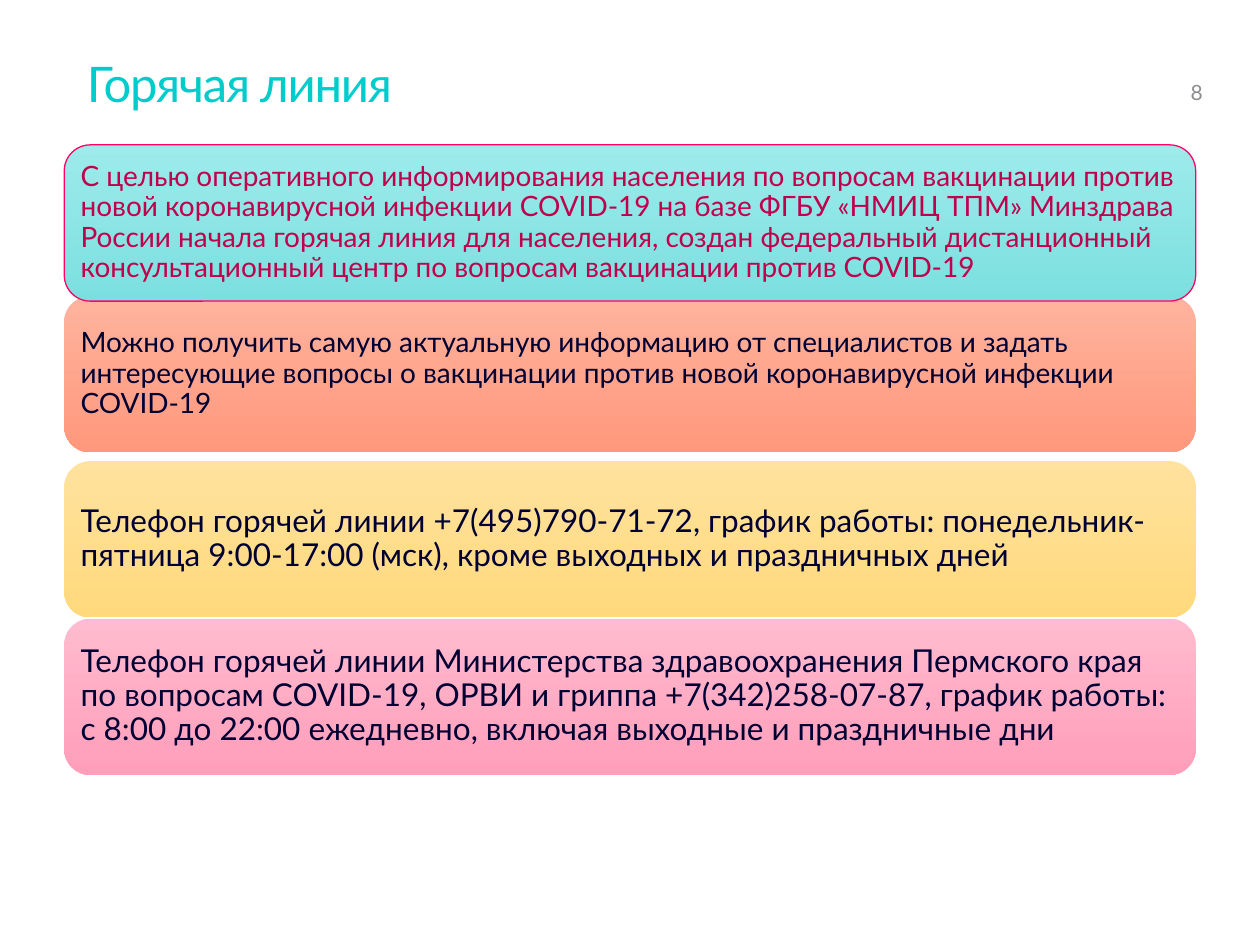
import pptx
import pptx.util
import pptx.dml.color
import pptx.enum.shapes
import pptx.enum.text

Inches = pptx.util.Inches
Pt = pptx.util.Pt
RGBColor = pptx.dml.color.RGBColor
Anchor = pptx.enum.text.MSO_ANCHOR
Align = pptx.enum.text.PP_ALIGN

FONT = "Lato"
TEAL = RGBColor(0x00, 0xCC, 0xCC)
GREY = RGBColor(0x8C, 0x8C, 0x90)
NAVY = RGBColor(0x00, 0x00, 0x33)
CRIMSON = RGBColor(0xBF, 0x00, 0x4C)
HOT_PINK = RGBColor(0xFF, 0x00, 0x66)
AQUA = (RGBColor(0x9D, 0xEB, 0xEB), RGBColor(0x7C, 0xDF, 0xDF))
CORAL = (RGBColor(0xFF, 0xB3, 0x9E), RGBColor(0xFF, 0x98, 0x7C))
AMBER = (RGBColor(0xFF, 0xE2, 0x9E), RGBColor(0xFF, 0xD9, 0x7C))
PINK = (RGBColor(0xFF, 0xBB, 0xCF), RGBColor(0xFF, 0x9E, 0xBB))

HEADING = "Горячая линия"
PAGE = "8"
CARD_LEFT, CARD_WIDTH, CARD_HEIGHT = 0.51, 8.98, 1.24
CARDS = [
    (2.35, CORAL, None, NAVY, 16,
     "Можно получить самую актуальную информацию от специалистов и задать "
     "интересующие вопросы о вакцинации против новой коронавирусной инфекции COVID-19"),
    (3.66, AMBER, None, NAVY, 18,
     "Телефон горячей линии +7(495)790-71-72, график работы: понедельник-пятница "
     "9:00-17:00 (мск), кроме выходных и праздничных дней"),
    (4.91, PINK, None, NAVY, 18,
     "Телефон горячей линии Министерства здравоохранения Пермского края по вопросам "
     "COVID-19, ОРВИ и гриппа +7(342)258-07-87, график работы: с 8:00 до 22:00 "
     "ежедневно, включая выходные и праздничные дни"),
    (1.15, AQUA, HOT_PINK, CRIMSON, 16,
     "С целью оперативного информирования населения по вопросам вакцинации против "
     "новой коронавирусной инфекции COVID-19 на базе ФГБУ «НМИЦ ТПМ» Минздрава России "
     "начала горячая линия для населения, создан федеральный дистанционный "
     "консультационный центр по вопросам вакцинации против COVID-19"),
]


def write(frame, text, size, color, anchor, inset_x, inset_y, spacing=None, wrap=True):
    frame.word_wrap = wrap
    frame.auto_size = pptx.enum.text.MSO_AUTO_SIZE.NONE
    frame.vertical_anchor = anchor
    frame.margin_left = frame.margin_right = Inches(inset_x)
    frame.margin_top = frame.margin_bottom = Inches(inset_y)
    paragraph = frame.paragraphs[0]
    paragraph.alignment = Align.LEFT
    paragraph.line_spacing = spacing
    run = paragraph.add_run()
    run.text = text
    run.font.name = FONT
    run.font.size = Pt(size)
    run.font.color.rgb = color
    return run


def add_card(slide, top, gradient, outline, color, size, text):
    card = slide.shapes.add_shape(
        pptx.enum.shapes.MSO_SHAPE.ROUNDED_RECTANGLE,
        Inches(CARD_LEFT), Inches(top), Inches(CARD_WIDTH), Inches(CARD_HEIGHT))
    card.shadow.inherit = False
    card.fill.gradient()
    card.fill.gradient_angle = 270
    for stop, shade in zip(card.fill.gradient_stops, gradient):
        stop.color.rgb = shade
    if outline is None:
        card.line.fill.background()
    else:
        card.line.color.rgb = outline
        card.line.width = Pt(0.75)
    write(card.text_frame, text, size, color, Anchor.MIDDLE, 0.07, 0.07, 0.9)


def main():
    deck = pptx.Presentation()
    deck.slide_width, deck.slide_height = Inches(10), Inches(7.5)
    slide = deck.slides.add_slide(deck.slide_layouts[5])

    heading = slide.shapes.title
    heading.left, heading.top = Inches(0.69), Inches(0.4)
    heading.width, heading.height = Inches(8.62), Inches(1.03)
    heading_run = write(heading.text_frame, HEADING, 28, TEAL, Anchor.TOP, 0, 0.05, Pt(32))
    heading_run.font._element.set("spc", "-70")

    page = slide.shapes.add_textbox(Inches(9.45), Inches(0.4), Inches(0.38), Inches(0.47))
    write(page.text_frame, PAGE, 12, GREY, Anchor.BOTTOM, 0, 0.04, wrap=False)

    for card in CARDS:
        add_card(slide, *card)

    deck.save("out.pptx")


if __name__ == "__main__":
    main()
